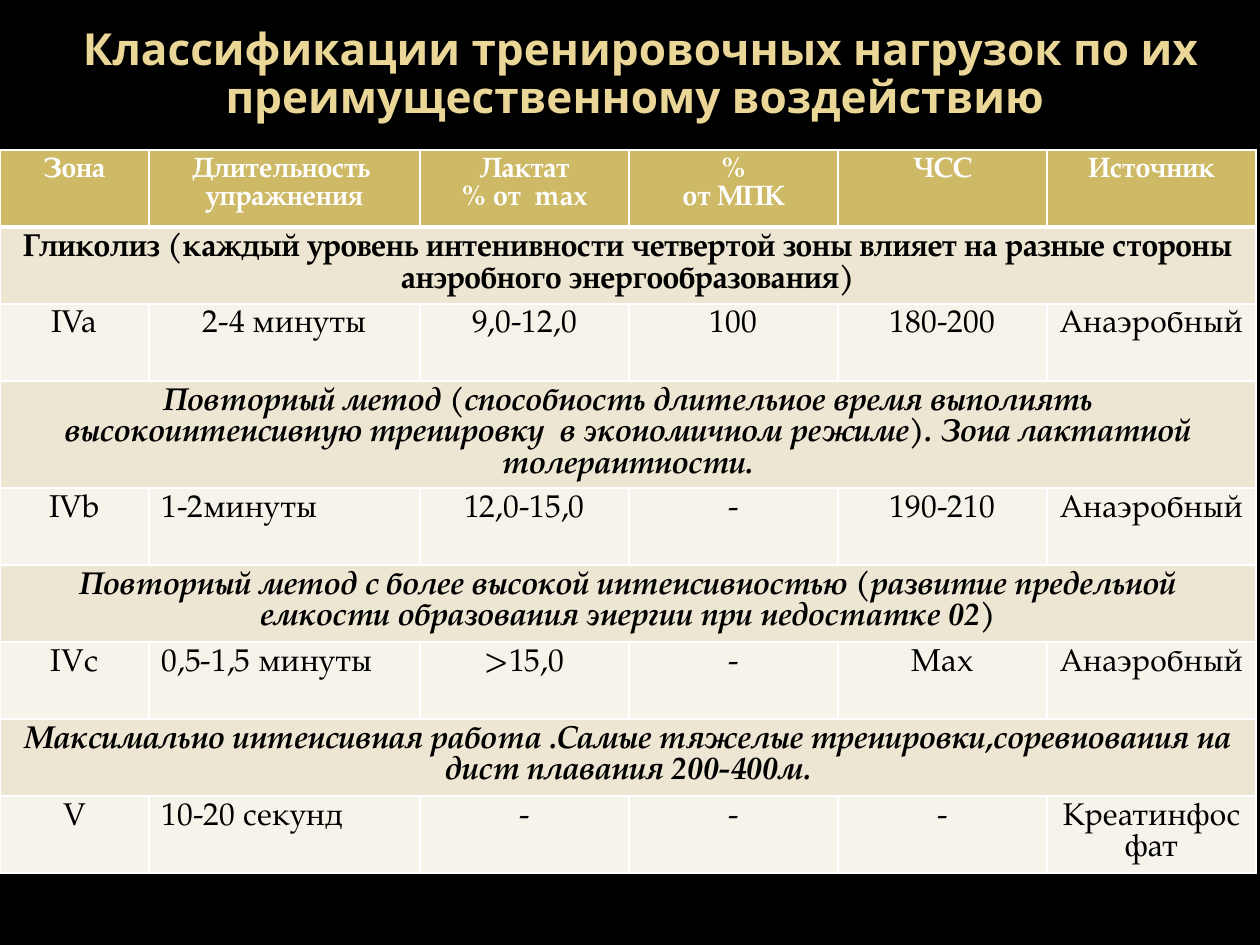
from lxml.etree import SubElement
from pptx import Presentation
from pptx.dml.color import RGBColor
from pptx.enum.text import MSO_ANCHOR, PP_ALIGN
from pptx.oxml.ns import qn
from pptx.util import Emu, Pt

WHITE, BLACK = "FFFFFF", "000000"
GOLD, BAND, PALE, TITLE_COLOR = "CEB966", "EDE6D3", "F6F3EA", "EAD696"
COLUMNS = [149, 271, 209, 209, 209, 209]
ROW_HEIGHT, TALL_ROW_HEIGHT, TALL_ROW = 77, 107, 3

HEADER = ["Зона", "Длительность  упражнения", "Лактат\n% от  max",
          "%\nот МПК", "ЧСС", "Источник"]
# A row with a single text spans the whole table.
ROWS = [
    ["Гликолиз (каждый уровень интенивности четвертой зоны влияет на разные "
     "стороны анэробного энергообразования)"],
    ["IVa", "2-4 минуты", "9,0-12,0", "100", "180-200", "Анаэробный"],
    ["Повторный метод (способность длительное время выполнять "
     "высокоинтенсивную тренировку  в экономичном режиме). Зона лактатной "
     "толерантности."],
    ["IVb", "1-2минуты", "12,0-15,0", "-", "190-210", "Анаэробный"],
    ["Повторный метод с более высокой интенсивностью (развитие предельной "
     "емкости образования энергии при недостатке 02)"],
    ["IVc", "0,5-1,5 минуты", ">15,0", "-", "Max", "Анаэробный"],
    ["Максимально интенсивная работа .Самые тяжелые "
     "тренировки,соревнования на дист плавания 200-400м."],
    ["V", "10-20 секунд", "-", "-", "-", "Креатинфосфат"],
]


def px(n):
    return Emu(round(n * 914400 / 126))


def rgb(value):
    return RGBColor.from_string(value)


def style_text(tf, size, color, font, spacing, bold=False, italic=False,
               align=PP_ALIGN.CENTER):
    for p in tf.paragraphs:
        p.alignment = align
        p.line_spacing = spacing
        for r in p.runs:
            r.font.name = font
            r.font.size = Pt(size)
            r.font.bold = bold
            r.font.italic = italic
            r.font.color.rgb = rgb(color)


def set_borders(cell, top=1, bottom=1):
    """Draw white borders, with widths in points."""
    tcPr = cell._tc.get_or_add_tcPr()
    widths = {"lnL": 1, "lnR": 1, "lnT": top, "lnB": bottom}
    for i, (side, width) in enumerate(widths.items()):
        ln = SubElement(tcPr, qn("a:" + side), w=str(Pt(width)))
        fill = SubElement(ln, qn("a:solidFill"))
        SubElement(fill, qn("a:srgbClr"), val=WHITE)
        tcPr.insert(i, ln)


def fill_cell(cell, text, fill, size=18, color=BLACK, **style):
    cell.fill.solid()
    cell.fill.fore_color.rgb = rgb(fill)
    cell.text_frame.text = text
    style_text(cell.text_frame, size, color, "TeX Gyre Pagella", Pt(size),
               **style)


def add_title(slide, x, y, w, h):
    sp = slide.shapes.add_textbox(px(x), px(y), px(w), px(h))
    tf = sp.text_frame
    tf.word_wrap = True
    tf.vertical_anchor = MSO_ANCHOR.MIDDLE
    tf.text = ("Классификации тренировочных нагрузок по их "
               "преимущественному воздействию ")
    style_text(tf, 25.2, TITLE_COLOR, "Noto Sans", 0.9, bold=True)


def add_zone_table(slide, x, y):
    count = len(ROWS) + 1
    heights = [ROW_HEIGHT] * count
    heights[TALL_ROW] = TALL_ROW_HEIGHT
    table = slide.shapes.add_table(count, len(COLUMNS), px(x), px(y),
                                   px(sum(COLUMNS)), px(sum(heights))).table
    for column, width in zip(table.columns, COLUMNS):
        column.width = px(width)
    for row, height in zip(table.rows, heights):
        row.height = px(height)

    for c, text in enumerate(HEADER):
        fill_cell(table.cell(0, c), text, GOLD, 16, WHITE, bold=True)
    for r, texts in enumerate(ROWS, 1):
        if len(texts) == 1:
            cell = table.cell(r, 0)
            cell.merge(table.cell(r, len(COLUMNS) - 1))
            fill_cell(cell, texts[0], BAND, bold=True, italic=r > 1)
            continue
        for c, text in enumerate(texts):
            left = c == 1 and r > 2
            fill_cell(table.cell(r, c), text, PALE,
                      align=PP_ALIGN.LEFT if left else PP_ALIGN.CENTER)

    for r, row in enumerate(table.rows):
        for cell in row.cells:
            set_borders(cell, top=3 if r == 1 else 1,
                        bottom=3 if r == 0 else 1)


def main():
    prs = Presentation()
    prs.slide_width, prs.slide_height = px(1260), px(945)
    s = prs.slides.add_slide(prs.slide_layouts[6])
    s.background.fill.solid()
    s.background.fill.fore_color.rgb = rgb(BLACK)
    add_title(s, 42, 16, 1197, 118)
    add_zone_table(s, 0, 150)
    prs.save("out.pptx")


if __name__ == "__main__":
    main()
